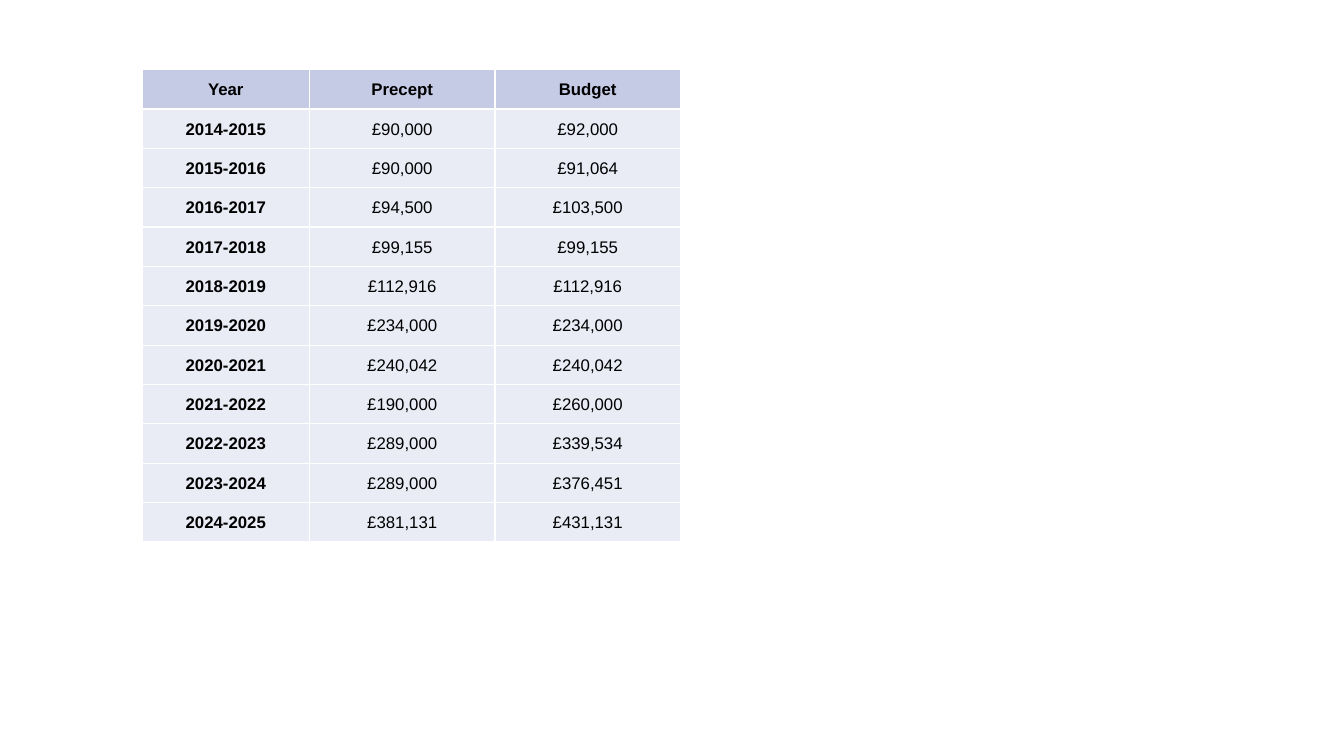
from dataclasses import dataclass

from lxml.etree import SubElement
from pptx import Presentation
from pptx.dml.color import RGBColor as Color
from pptx.enum.text import MSO_ANCHOR as Anchor, PP_ALIGN as Align
from pptx.oxml.ns import qn
from pptx.util import Inches, Pt


@dataclass
class Theme:
    font: str = "Arial"
    size: int = 12
    border_width: int = 1
    text: str = "000000"
    header_fill: str = "C5CAE5"
    body_fill: str = "E9EBF5"
    border: str = "FFFFFF"


def add_borders(cell, color, width):
    properties = cell._tc.get_or_add_tcPr()
    for side in ("a:lnL", "a:lnR", "a:lnT", "a:lnB"):
        line = SubElement(properties, qn(side), w=str(Pt(width)))
        fill = SubElement(line, qn("a:solidFill"))
        SubElement(fill, qn("a:srgbClr"), val=color)


theme = Theme()

# Slide
presentation = Presentation()
presentation.slide_width = Inches(13.33)
presentation.slide_height = Inches(7.5)
slide = presentation.slides.add_slide(presentation.slide_layouts[6])

# Yearly figures
budget_rows = [
    ("Year", "Precept", "Budget"),
    ("2014-2015", "£90,000", "£92,000"),
    ("2015-2016", "£90,000", "£91,064"),
    ("2016-2017", "£94,500", "£103,500"),
    ("2017-2018", "£99,155", "£99,155"),
    ("2018-2019", "£112,916", "£112,916"),
    ("2019-2020", "£234,000", "£234,000"),
    ("2020-2021", "£240,042", "£240,042"),
    ("2021-2022", "£190,000", "£260,000"),
    ("2022-2023", "£289,000", "£339,534"),
    ("2023-2024", "£289,000", "£376,451"),
    ("2024-2025", "£381,131", "£431,131"),
]

# Table grid
column_widths = [Inches(1.66), Inches(1.84), Inches(1.84)]
table_height = Inches(4.69)
table = slide.shapes.add_table(
    len(budget_rows), len(column_widths),
    Inches(1.41), Inches(0.69), sum(column_widths), table_height,
).table
table.horz_banding = False
for column, width in zip(table.columns, column_widths):
    column.width = width
for row in table.rows:
    row.height = table_height // len(budget_rows)

# Cells: header row and year column in bold
for row_index, values in enumerate(budget_rows):
    for column_index, value in enumerate(values):
        is_header = row_index == 0
        cell = table.cell(row_index, column_index)
        add_borders(cell, theme.border, theme.border_width)
        cell.fill.solid()
        cell.fill.fore_color.rgb = Color.from_string(
            theme.header_fill if is_header else theme.body_fill)
        cell.vertical_anchor = Anchor.MIDDLE
        cell.margin_left = cell.margin_right = cell.margin_top = Inches(0.01)
        cell.margin_bottom = 0

        paragraph = cell.text_frame.paragraphs[0]
        paragraph.alignment = Align.CENTER
        run = paragraph.add_run()
        run.text = value
        run.font.name = theme.font
        run.font.size = Pt(theme.size)
        run.font.bold = is_header or column_index == 0
        run.font.color.rgb = Color.from_string(theme.text)

presentation.save("out.pptx")
